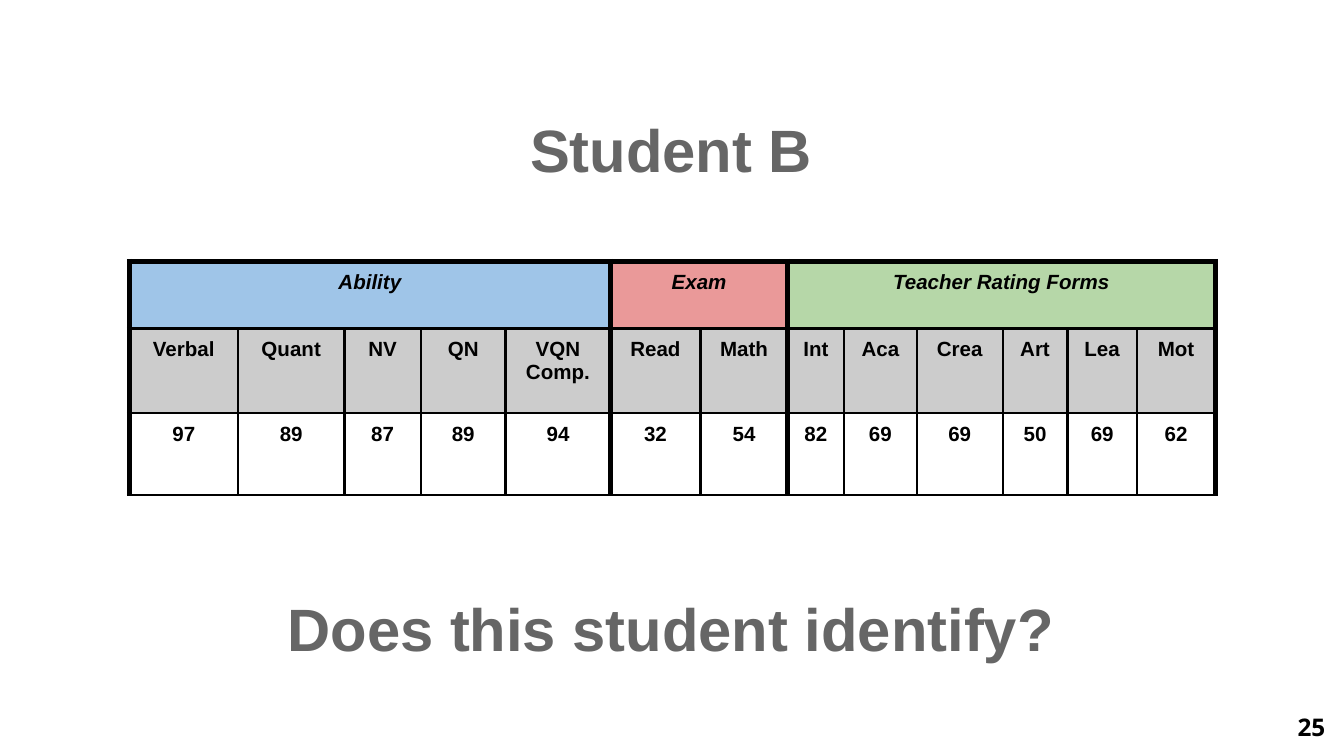
from pptx import Presentation
from pptx.dml.color import RGBColor as RGB
from pptx.enum.text import MSO_ANCHOR as Anchor, MSO_AUTO_SIZE as Fit, PP_ALIGN as Align
from pptx.oxml.ns import qn
from pptx.util import Pt
from lxml.etree import SubElement as Sub

BLACK, GREY = "000000", "666666"
THIN, THICK = 1.5, 3
HEAD = dict(size=Pt(32), name="Arial", bold=True, italic=False)
CELL = dict(size=Pt(11), name="Arial", bold=True, italic=False)
GROUP = dict(CELL, italic=True)
NUMBER = dict(size=Pt(13), name="Open Sans", bold=True)

# name, fill, tests as (label, score, column width)
GROUPS = [
    ("Ability", "9FC5E8", [("Verbal", 97, 58.3), ("Quant", 89, 56.9), ("NV", 87, 41),
                           ("QN", 89, 45.4), ("VQN Comp.", 94, 56.2)]),
    ("Exam", "EA9999", [("Read", 32, 48.2), ("Math", 54, 46.8)]),
    ("Teacher Rating Forms", "B6D7A8",
     [("Int", 82, 30.2), ("Aca", 69, 38.9), ("Crea", 69, 46.1),
      ("Art", 50, 34.6), ("Lea", 69, 37.4), ("Mot", 62, 41.8)]),
]
ROWS = [36, 45.4, 43.9]


def tint(text):
    return RGB.from_string(text)


def write(frame, text, style, color=BLACK, align=Align.CENTER):
    frame.text = text
    para = frame.paragraphs[0]
    para.alignment = align
    para.space_before = Pt(0)
    font = para.runs[0].font
    for key, value in style.items():
        setattr(font, key, value)
    font.color.rgb = tint(color)


def pad(item, gap):
    for side in ("left", "top", "right", "bottom"):
        setattr(item, "margin_" + side, Pt(gap))


def block(shape, box, text, style, color, align, anchor):
    """Place a shape in a box and set its one line of text."""
    for key, value in zip(("left", "top", "width", "height"), box):
        setattr(shape, key, Pt(value))
    frame = shape.text_frame
    frame.word_wrap, frame.auto_size = True, Fit.NONE
    frame.vertical_anchor = anchor
    pad(frame, 7.2)
    write(frame, text, style, color, align)


def edge(cell, widths):
    """Draw the left, right, top and bottom borders of a cell."""
    props = cell._tc.get_or_add_tcPr()
    for side, width in zip("LRTB", widths):
        line = Sub(props, qn("a:ln" + side), w=str(Pt(width)))
        fill = Sub(line, qn("a:solidFill"))
        Sub(fill, qn("a:srgbClr"), val=BLACK)


def scores(slide, left, top):
    tests = [test for _, _, part in GROUPS for test in part]
    width = sum(test[2] for test in tests)
    table = slide.shapes.add_table(len(ROWS), len(tests), Pt(left), Pt(top),
                                   Pt(width), Pt(sum(ROWS))).table
    table.first_row = table.horz_banding = False
    for row, height in zip(table.rows, ROWS):
        row.height = Pt(height)
    col = 0
    for name, color, part in GROUPS:
        last = col + len(part) - 1
        for num, (label, score, wide) in enumerate(part, col):
            table.columns[num].width = Pt(wide)
            texts = (name if num == col else "", label, str(score))
            for row, (text, fill) in enumerate(zip(texts, (color, "CCCCCC", None))):
                cell = table.cell(row, num)
                pad(cell, 5)
                edge(cell, (THICK if num == col or row == 0 else THIN,
                            THICK if num == last or row == 0 else THIN,
                            THICK if row == 0 else THIN, THIN))
                if fill:
                    cell.fill.solid()
                    cell.fill.fore_color.rgb = tint(fill)
                else:
                    cell.fill.background()
                if text:
                    write(cell.text_frame, text, CELL if row else GROUP)
        table.cell(0, col).merge(table.cell(0, last))
        col = last + 1


def main():
    deck = Presentation()
    deck.slide_width, deck.slide_height = Pt(720), Pt(405)
    slide = deck.slides.add_slide(deck.slide_layouts[0])
    scores(slide, 69.3, 140)
    title, ask = slide.placeholders
    for shape, top, text in ((title, 46.8, "Student B"),
                             (ask, 303.8, "Does this student identify?")):
        block(shape, (119.5, top, 480.2, 59), text, HEAD, GREY, Align.CENTER, Anchor.BOTTOM)
    page = slide.shapes.add_textbox(0, 0, 0, 0)
    block(page, (673.9, 373.7, 43.2, 31), "25", NUMBER, BLACK, Align.RIGHT, Anchor.MIDDLE)
    deck.save("out.pptx")


if __name__ == "__main__":
    main()
